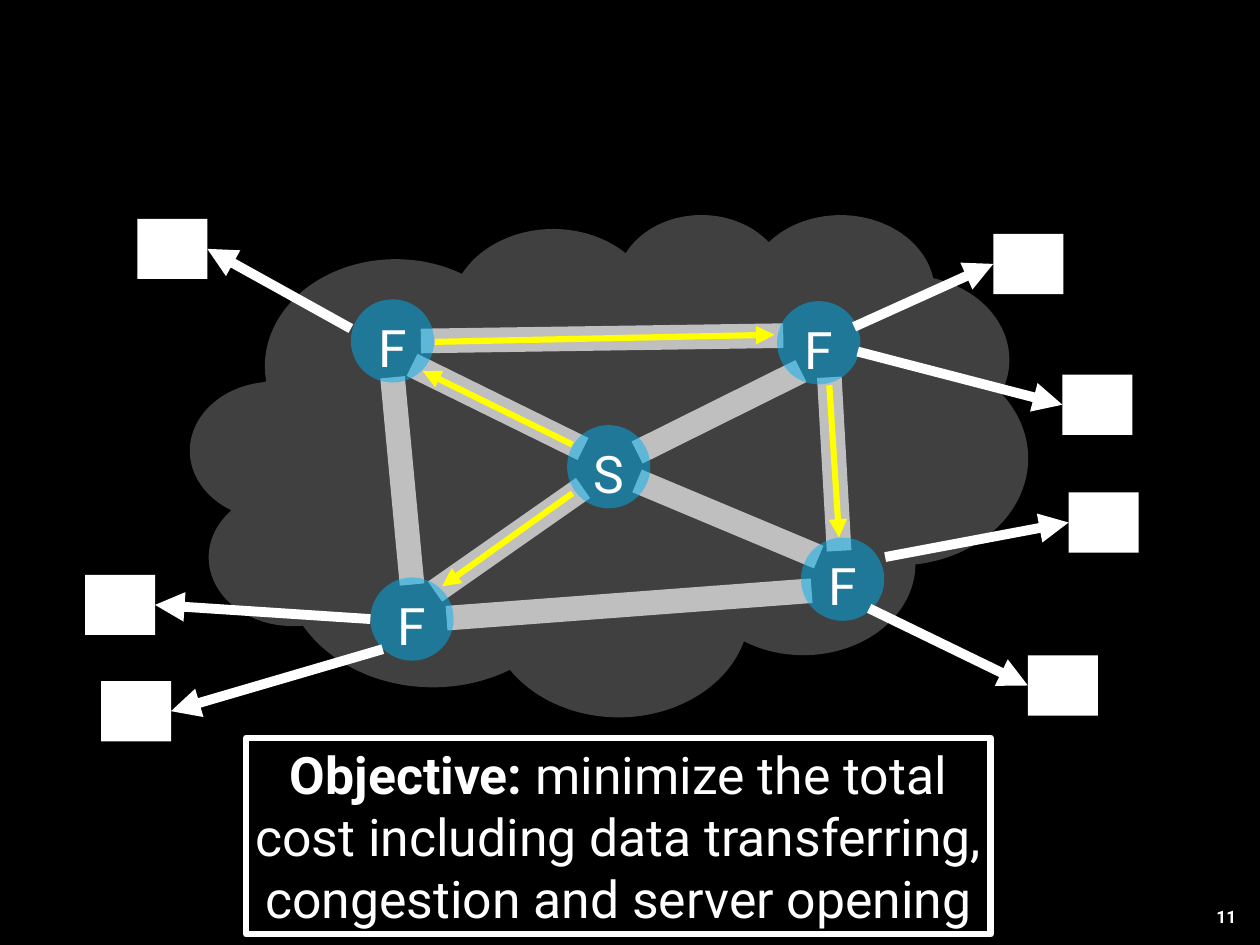
from lxml import etree
from pptx import Presentation
from pptx.dml.color import RGBColor
from pptx.enum.shapes import MSO_CONNECTOR as Connector, MSO_SHAPE as Shape
from pptx.enum.text import MSO_ANCHOR as Anchor, MSO_AUTO_SIZE as AutoSize, PP_ALIGN as Align
from pptx.oxml.ns import qn
from pptx.util import Pt

PX = 9144  # EMU per px, 100 px to the inch
BLACK = RGBColor(0x00, 0x00, 0x00)
WHITE = RGBColor(0xFF, 0xFF, 0xFF)
GRAY = RGBColor(0x80, 0x80, 0x80)
SILVER = RGBColor(0xBF, 0xBF, 0xBF)
BLUE = RGBColor(0x00, 0xB0, 0xF0)
YELLOW = RGBColor(0xFF, 0xFF, 0x00)

# Content
SLIDE_SIZE = (1422, 1067)
CLOUD = (215, 241, 945, 567)
NODE_SIZE = 94
NODES = [  # label, left, top
    ("F", 418, 652), ("F", 396, 338), ("S", 640, 480),
    ("F", 877, 340), ("F", 904, 607),
]
LINKS = [  # from x, y, to x, y
    (475, 385, 884, 379), (504, 698, 916, 667),
    (443, 426, 465, 660), (947, 622, 936, 426),
    (465, 412, 658, 507), (719, 511, 904, 419),
    (719, 543, 924, 629), (491, 668, 658, 551),
]
FLOWS = [
    (646, 502, 477, 419), (491, 386, 874, 378),
    (646, 557, 499, 662), (936, 435, 947, 607),
]
CLIENT_SIZE = (79, 68)
CLIENTS = [  # left, top, start of the arrow that reaches the client
    (155, 247, (396, 371)), (96, 649, (418, 699)), (114, 769, (432, 733)),
    (1160, 740, (981, 687)), (1121, 264, (964, 369)),
    (1199, 423, (968, 397)), (1206, 556, (999, 629)),
]
OBJECTIVE_BOX = (278, 833, 840, 222)
OBJECTIVE = [
    ("Objective: ", True),
    ("minimize the total cost including data transferring, "
     "congestion and server opening", False),
]
PAGE_BOX = (1371, 1018, 34, 35)


def emu(lengths):
    return [length * PX for length in lengths]


def add_filled(slide, kind, box, color, opacity=100):
    shape = slide.shapes.add_shape(kind, *emu(box))
    shape.shadow.inherit = False
    shape.fill.solid()
    shape.fill.fore_color.rgb = color
    shape.line.fill.background()
    if opacity < 100:
        color_element = shape.fill._xPr.find(".//" + qn("a:srgbClr"))
        etree.SubElement(color_element, qn("a:alpha"), val=str(opacity * 1000))
    return shape


def add_line(slide, ends, color, width, arrow=False):
    line = slide.shapes.add_connector(Connector.STRAIGHT, *emu(ends))
    line.line.color.rgb = color
    line.line.width = Pt(width)
    if arrow:
        etree.SubElement(line.line._get_or_add_ln(), qn("a:tailEnd"), type="triangle")
    etree.SubElement(line._element.spPr, qn("a:effectLst"))


def write(shape, runs, size=42, align=Align.CENTER, anchor=Anchor.TOP, wrap=True):
    frame = shape.text_frame
    frame.word_wrap = wrap
    frame.vertical_anchor = anchor
    paragraph = frame.paragraphs[0]
    paragraph.alignment = align
    for text, bold in runs:
        run = paragraph.add_run()
        run.text = text
        run.font.name = "Roboto"
        run.font.size = Pt(size)
        run.font.bold = bold
        run.font.color.rgb = WHITE


def main():
    presentation = Presentation()
    presentation.slide_width, presentation.slide_height = emu(SLIDE_SIZE)
    slide = presentation.slides.add_slide(presentation.slide_layouts[6])
    slide.background.fill.solid()
    slide.background.fill.fore_color.rgb = BLACK

    # Page number, on one line in its narrow box
    page = slide.shapes.add_textbox(*emu(PAGE_BOX))
    write(page, [("11", True)], size=14, align=Align.RIGHT, wrap=False)
    page.text_frame.margin_left = 0
    page.text_frame.auto_size = AutoSize.SHAPE_TO_FIT_TEXT

    # Network cloud, links and nodes
    add_filled(slide, Shape.CLOUD, CLOUD, GRAY, opacity=50)
    for ends in LINKS:
        add_line(slide, ends, SILVER, 20)
    for label, left, top in NODES:
        node = add_filled(slide, Shape.OVAL, (left, top, NODE_SIZE, NODE_SIZE),
                          BLUE, opacity=50)
        write(node, [(label, False)])

    # Clients
    for left, top, _ in CLIENTS:
        add_filled(slide, Shape.RECTANGLE, (left, top, *CLIENT_SIZE), WHITE)

    # Data flows, then arrows to the near side of each client
    for ends in FLOWS:
        add_line(slide, ends, YELLOW, 5, arrow=True)
    width, height = CLIENT_SIZE
    for left, top, start in CLIENTS:
        near_side = left if start[0] < left else left + width
        add_line(slide, (*start, near_side, top + height // 2), WHITE, 8, arrow=True)

    # Objective
    objective = add_filled(slide, Shape.RECTANGLE, OBJECTIVE_BOX, BLACK)
    objective.line.color.rgb = WHITE
    objective.line.width = Pt(5)
    write(objective, OBJECTIVE, anchor=Anchor.MIDDLE)

    presentation.save("out.pptx")


if __name__ == "__main__":
    main()
